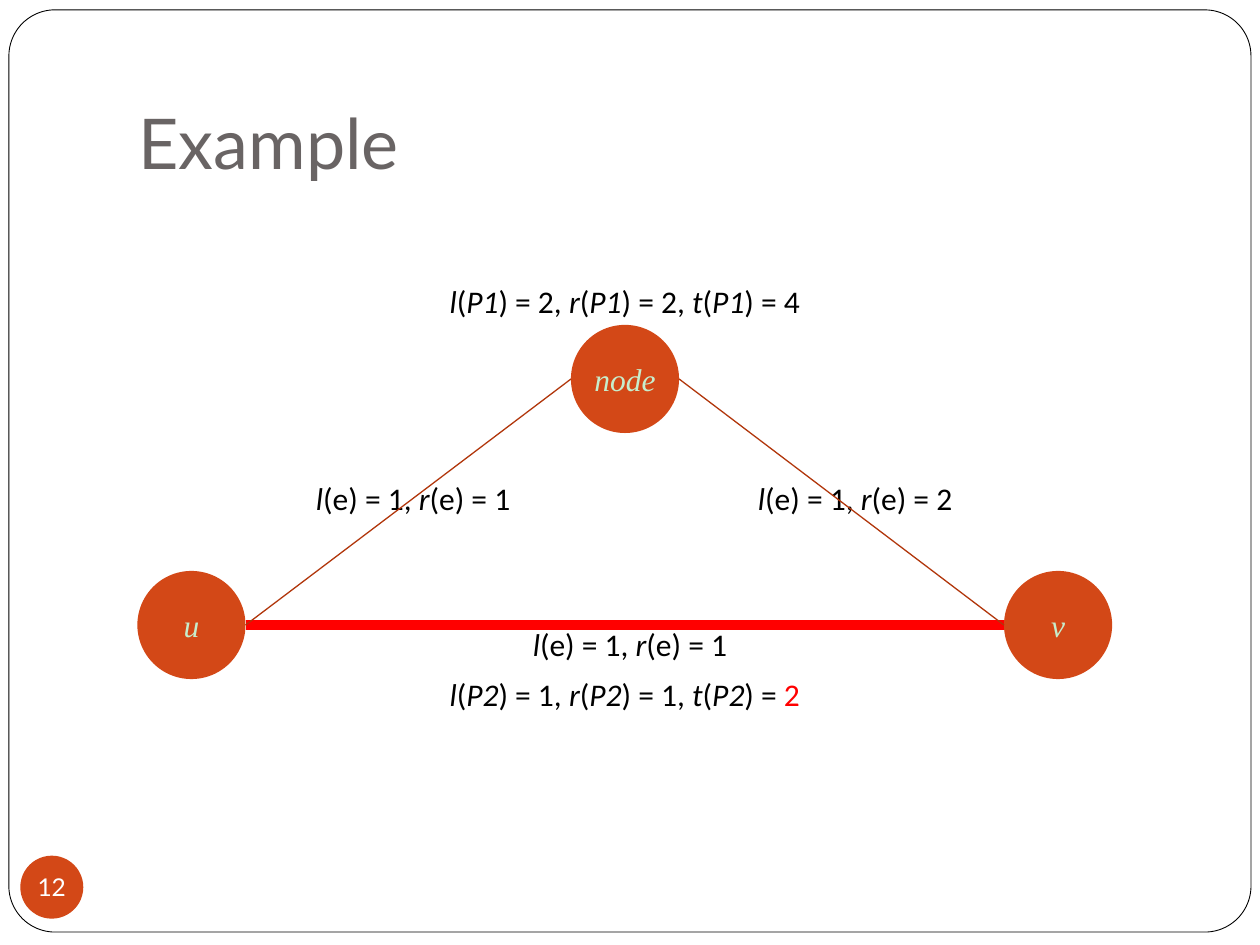
from lxml import etree
from pptx import Presentation
from pptx.dml.color import RGBColor
from pptx.enum.shapes import MSO_CONNECTOR, MSO_SHAPE
from pptx.enum.text import MSO_ANCHOR, MSO_AUTO_SIZE, PP_ALIGN
from pptx.oxml.ns import qn
from pptx.util import Cm, Pt

OVAL, ROUNDED = MSO_SHAPE.OVAL, MSO_SHAPE.ROUNDED_RECTANGLE
STRAIGHT = MSO_CONNECTOR.STRAIGHT
MIDDLE, BOTTOM = MSO_ANCHOR.MIDDLE, MSO_ANCHOR.BOTTOM
CENTER, LEFT = PP_ALIGN.CENTER, PP_ALIGN.LEFT
FIXED, GROW = MSO_AUTO_SIZE.NONE, MSO_AUTO_SIZE.SHAPE_TO_FIT_TEXT

WHITE = RGBColor(0xFF, 0xFF, 0xFF)
BLACK = RGBColor(0, 0, 0)
RED = RGBColor(0xFF, 0, 0)
GRAY = RGBColor(0x69, 0x64, 0x64)
ORANGE = RGBColor(0xD3, 0x48, 0x17)
RUST = RGBColor(0xB1, 0x36, 0x0B)
MINT = RGBColor(0xC7, 0xED, 0xCC)

NODE_SIZE = 2.18
NODES = {"u": (2.77, 11.51), "node": (11.51, 6.55), "v": (20.24, 11.51)}
EDGES = [("u", "v", RED, 6), ("u", "node", RUST, 0.75), ("node", "v", RUST, 0.75)]

# Asterisks enclose italic text.
EDGE_WIDTH, PATH_WIDTH, LABEL_HEIGHT = 5.94, 8.53, 1.02
LABELS = [
    (5.36, 9.53, EDGE_WIDTH, "*l*(e) = 1, *r*(e) = 1", ""),
    (14.27, 9.53, EDGE_WIDTH, "*l*(e) = 1, *r*(e) = 2", ""),
    (9.73, 12.47, EDGE_WIDTH, "*l*(e) = 1, *r*(e) = 1", ""),
    (8.33, 5.56, PATH_WIDTH, "*l*(*P1*) = 2, *r*(*P1*) = 2, *t*(*P1*) = 4", ""),
    (8.33, 13.49, PATH_WIDTH, "*l*(*P2*) = 1, *r*(*P2*) = 1, *t*(*P2*) = ", "2"),
]


def set_font(paragraph, name, size, color):
    font = paragraph.font
    font.name, font.size, font.color.rgb = name, Pt(size), color


def add_circle(slide, left, top, size, text, font_name, font_size, color):
    circle = slide.shapes.add_shape(OVAL, Cm(left), Cm(top), Cm(size), Cm(size))
    circle.shadow.inherit = False
    circle.fill.solid()
    circle.fill.fore_color.rgb = ORANGE
    circle.line.fill.background()
    frame = circle.text_frame
    frame.word_wrap = False
    frame.vertical_anchor = MIDDLE
    paragraph = frame.paragraphs[0]
    paragraph.text = text
    paragraph.alignment = CENTER
    set_font(paragraph, font_name, font_size, color)
    return circle


def add_title(slide, text):
    title = slide.shapes.title
    title.left, title.top, title.width, title.height = Cm(2.54), Cm(0.76), Cm(21.59), Cm(3.18)
    frame = title.text_frame
    frame.text = text
    frame.auto_size = FIXED
    frame.vertical_anchor = BOTTOM
    frame.margin_bottom = Cm(0.25)
    frame.paragraphs[0].alignment = LEFT
    set_font(frame.paragraphs[0], "Lato", 40, GRAY)
    return title


def add_border(slide, title):
    border = slide.shapes.add_shape(ROUNDED, Cm(0.18), Cm(0.2), Cm(25.04), Cm(18.59))
    border.adjustments[0] = 0.05
    border.shadow.inherit = False
    border.fill.solid()
    border.fill.fore_color.rgb = WHITE
    border.line.color.rgb = BLACK
    border.line.width = Pt(0.5)
    title.element.addprevious(border.element)


def add_label(slide, left, top, width, markup, highlight):
    label = slide.shapes.add_textbox(Cm(left), Cm(top), Cm(width), Cm(LABEL_HEIGHT))
    frame = label.text_frame
    frame.word_wrap = True
    frame.auto_size = GROW
    paragraph = frame.paragraphs[0]
    paragraph.alignment = CENTER
    set_font(paragraph, "Calibri", 18, BLACK)
    for position, part in enumerate(markup.split("*")):
        if part:
            run = paragraph.add_run()
            run.text = part
            run.font.italic = position % 2 == 1
    if highlight:
        run = paragraph.add_run()
        run.text = highlight
        run.font.color.rgb = RED


def add_edge(slide, start, end, color, width):
    (start_x, start_y), (end_x, end_y) = NODES[start], NODES[end]
    radius = NODE_SIZE / 2
    edge = slide.shapes.add_connector(
        STRAIGHT, Cm(start_x + NODE_SIZE), Cm(start_y + radius), Cm(end_x), Cm(end_y + radius))
    edge.line.color.rgb = color
    edge.line.width = Pt(width)
    etree.SubElement(edge.element.spPr, qn("a:effectLst"))


def main():
    presentation = Presentation()
    presentation.slide_width, presentation.slide_height = Cm(25.4), Cm(19.05)
    slide = presentation.slides.add_slide(presentation.slide_layouts[5])
    add_border(slide, add_title(slide, "Example"))

    page = add_circle(slide, 0.41, 17.25, 1.27, "12", "Lato", 14, WHITE).text_frame
    page.margin_left = page.margin_right = page.margin_top = page.margin_bottom = 0

    for name, (left, top) in NODES.items():
        node = add_circle(slide, left, top, NODE_SIZE, name, "Times New Roman", 18, MINT)
        node.text_frame.paragraphs[0].font.italic = True
    for label in LABELS:
        add_label(slide, *label)
    for edge in EDGES:
        add_edge(slide, *edge)

    presentation.save("out.pptx")


if __name__ == "__main__":
    main()
